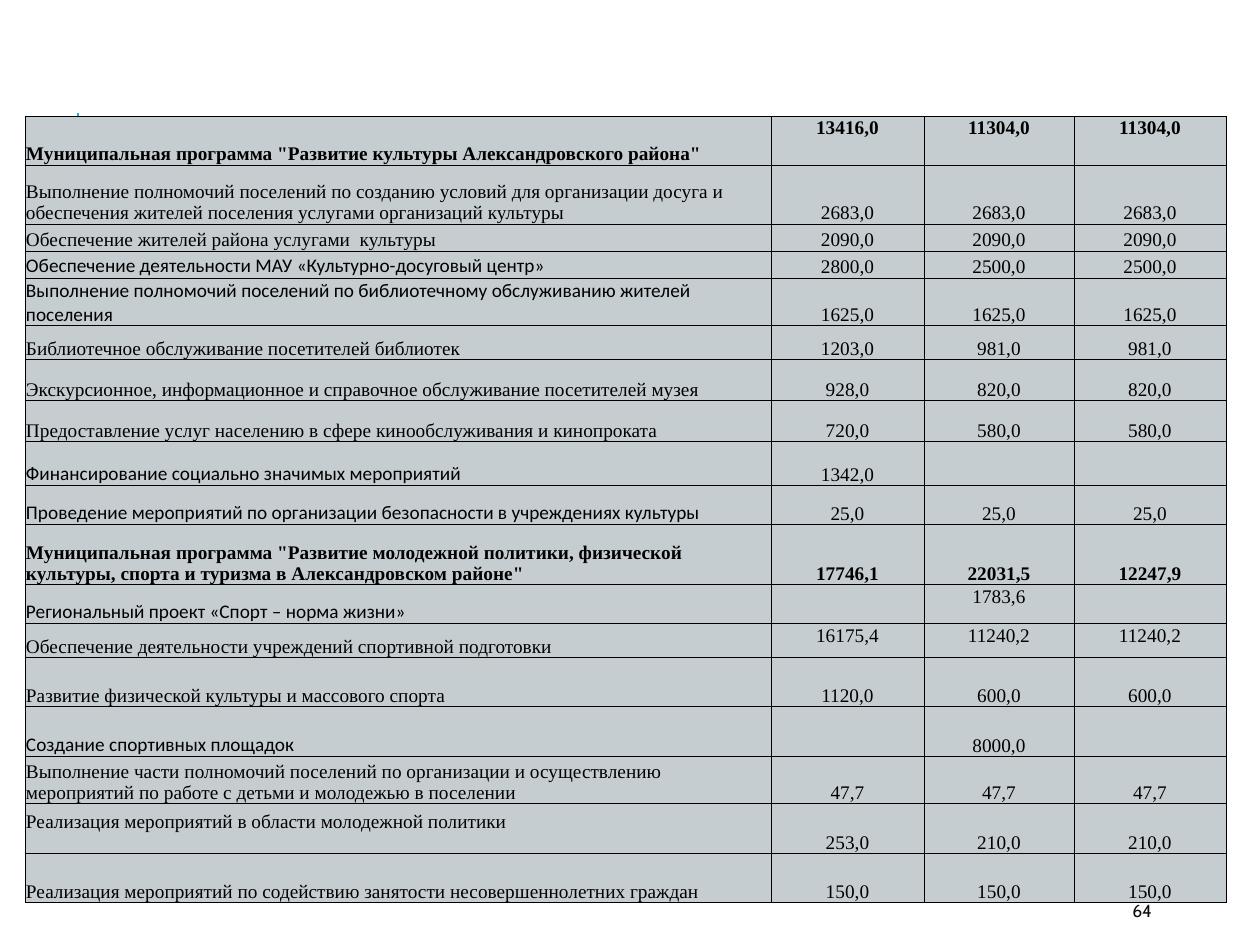
from dataclasses import dataclass

import pptx
import pptx.dml.color
import pptx.enum.shapes
import pptx.enum.text
import pptx.oxml.ns
import pptx.util
from lxml import etree

PX = 914400 // 126
ANCHOR = pptx.enum.text.MSO_ANCHOR
ALIGN = pptx.enum.text.PP_ALIGN
qn = pptx.oxml.ns.qn


@dataclass(frozen=True)
class Theme:
    cell: str = "C6CDD1"
    border: str = "000000"
    text: str = "000000"
    accent: str = "1CADE4"
    number: str = "0D0D0D"
    serif: str = "Times New Roman"
    sans: str = "Calibri"
    footer: str = "Cabin"
    body_pt: int = 11
    footer_pt: int = 10
    border_pt: float = 0.5
    accent_pt: float = 1.5


@dataclass(frozen=True)
class BudgetRow:
    height: int
    label: str
    values: tuple[str, str, str]
    font: str = Theme.serif
    bold: bool = False
    values_top: bool = False
    label_lift: int = 0


T = Theme()
COLUMNS = (746, 153, 150, 152)
ROWS = (
    BudgetRow(49, 'Муниципальная программа "Развитие культуры Александровского района"',
              ("13416,0", "11304,0", "11304,0"), bold=True, values_top=True),
    BudgetRow(59, "Выполнение полномочий поселений по созданию условий для организации досуга и "
              "обеспечения жителей поселения услугами организаций культуры",
              ("2683,0", "2683,0", "2683,0")),
    BudgetRow(27, "Обеспечение жителей района услугами  культуры", ("2090,0", "2090,0", "2090,0")),
    BudgetRow(27, "Обеспечение деятельности МАУ «Культурно-досуговый центр»",
              ("2800,0", "2500,0", "2500,0"), font=T.sans),
    BudgetRow(48, "Выполнение полномочий поселений по библиотечному обслуживанию жителей поселения",
              ("1625,0", "1625,0", "1625,0"), font=T.sans),
    BudgetRow(34, "Библиотечное обслуживание посетителей библиотек", ("1203,0", "981,0", "981,0")),
    BudgetRow(41, "Экскурсионное, информационное и справочное обслуживание посетителей музея",
              ("928,0", "820,0", "820,0")),
    BudgetRow(41, "Предоставление услуг населению в сфере кинообслуживания и кинопроката",
              ("720,0", "580,0", "580,0")),
    BudgetRow(44, "Финансирование социально значимых мероприятий", ("1342,0", "", ""), font=T.sans),
    BudgetRow(39, "Проведение мероприятий по организации безопасности в учреждениях культуры",
              ("25,0", "25,0", "25,0"), font=T.sans),
    BudgetRow(60, 'Муниципальная программа "Развитие молодежной политики, физической '
              'культуры, спорта и туризма в Александровском районе"',
              ("17746,1", "22031,5", "12247,9"), bold=True),
    BudgetRow(39, "Региональный проект «Спорт – норма жизни»", ("", "1783,6", ""),
              font=T.sans, values_top=True),
    BudgetRow(34, "Обеспечение деятельности учреждений спортивной подготовки",
              ("16175,4", "11240,2", "11240,2"), values_top=True),
    BudgetRow(49, "Развитие физической культуры и массового спорта", ("1120,0", "600,0", "600,0")),
    BudgetRow(50, "Создание спортивных площадок", ("", "8000,0", ""), font=T.sans),
    BudgetRow(43, "Выполнение части полномочий поселений по организации и осуществлению "
              "мероприятий по работе с детьми и молодежью в поселении", ("47,7", "47,7", "47,7")),
    BudgetRow(50, "Реализация мероприятий в области молодежной политики",
              ("253,0", "210,0", "210,0"), label_lift=21),
    BudgetRow(49, "Реализация мероприятий по содействию занятости несовершеннолетних граждан",
              ("150,0", "150,0", "150,0")),
)


def rgb(color: str) -> pptx.dml.color.RGBColor:
    return pptx.dml.color.RGBColor.from_string(color)


def write(tf, text: str, *, font: str = T.serif, size: int = T.body_pt, color: str = T.text,
          bold: bool = False, align=ALIGN.LEFT, spacing: float = 1.0, after: int = 0) -> None:
    p = tf.paragraphs[0]
    p.alignment = align
    p.line_spacing = spacing
    p.space_after = pptx.util.Pt(after)
    if not text:
        etree.SubElement(p._p, qn("a:endParaRPr"), sz=str(size * 100))
        return
    r = p.add_run()
    r.text = text
    r.font.name = font
    r.font.size = pptx.util.Pt(size)
    r.font.bold = bold
    r.font.color.rgb = rgb(color)


def style_cell(cell, *, top: bool = False, lift: int = 0) -> None:
    cell.vertical_anchor = ANCHOR.TOP if top else ANCHOR.BOTTOM
    cell.margin_left = cell.margin_right = PX
    cell.margin_top = 0 if top else PX
    cell.margin_bottom = lift * PX
    tcPr = cell._tc.get_or_add_tcPr()
    for side in ("lnL", "lnR", "lnT", "lnB"):
        ln = etree.SubElement(tcPr, qn(f"a:{side}"), w=str(pptx.util.Pt(T.border_pt)))
        fill = etree.SubElement(ln, qn("a:solidFill"))
        etree.SubElement(fill, qn("a:srgbClr"), val=T.border)
    cell.fill.solid()
    cell.fill.fore_color.rgb = rgb(T.cell)


def draw_row(table, index: int, row: BudgetRow) -> None:
    table.rows[index].height = row.height * PX
    label = table.cell(index, 0)
    style_cell(label, lift=row.label_lift)
    write(label.text_frame, row.label, font=row.font, bold=row.bold)
    for column, value in enumerate(row.values, 1):
        cell = table.cell(index, column)
        style_cell(cell, top=row.values_top)
        write(cell.text_frame, value, bold=row.bold, align=ALIGN.CENTER,
              spacing=1.07 if row.values_top else 1.0, after=8 if row.values_top else 0)


def draw_table(s) -> None:
    height = sum(row.height for row in ROWS)
    table = s.shapes.add_table(len(ROWS), len(COLUMNS), 25 * PX, 116 * PX,
                               sum(COLUMNS) * PX, height * PX).table
    table.first_row = table.horz_banding = False
    for column, width in zip(table.columns, COLUMNS):
        column.width = width * PX
    for index, row in enumerate(ROWS):
        draw_row(table, index, row)


def draw_accent(s) -> None:
    sp = s.shapes.add_connector(pptx.enum.shapes.MSO_CONNECTOR.STRAIGHT,
                                78 * PX, 239 * PX, 78 * PX, 113 * PX)
    sp.line.color.rgb = rgb(T.accent)
    sp.line.width = pptx.util.Pt(T.accent_pt)
    etree.SubElement(sp._element.spPr, qn("a:effectLst"))


def draw_page_number(s) -> None:
    tf = s.shapes.add_textbox(1120 * PX, 892 * PX, 101 * PX, 38 * PX).text_frame
    tf.word_wrap = True
    tf.vertical_anchor = ANCHOR.MIDDLE
    write(tf, "64", font=T.footer, size=T.footer_pt, color=T.number)


def main() -> None:
    prs = pptx.Presentation()
    prs.slide_width, prs.slide_height = 1260 * PX, 945 * PX
    s = prs.slides.add_slide(prs.slide_layouts[6])
    draw_accent(s)
    draw_page_number(s)
    draw_table(s)
    prs.save("out.pptx")


if __name__ == "__main__":
    main()
